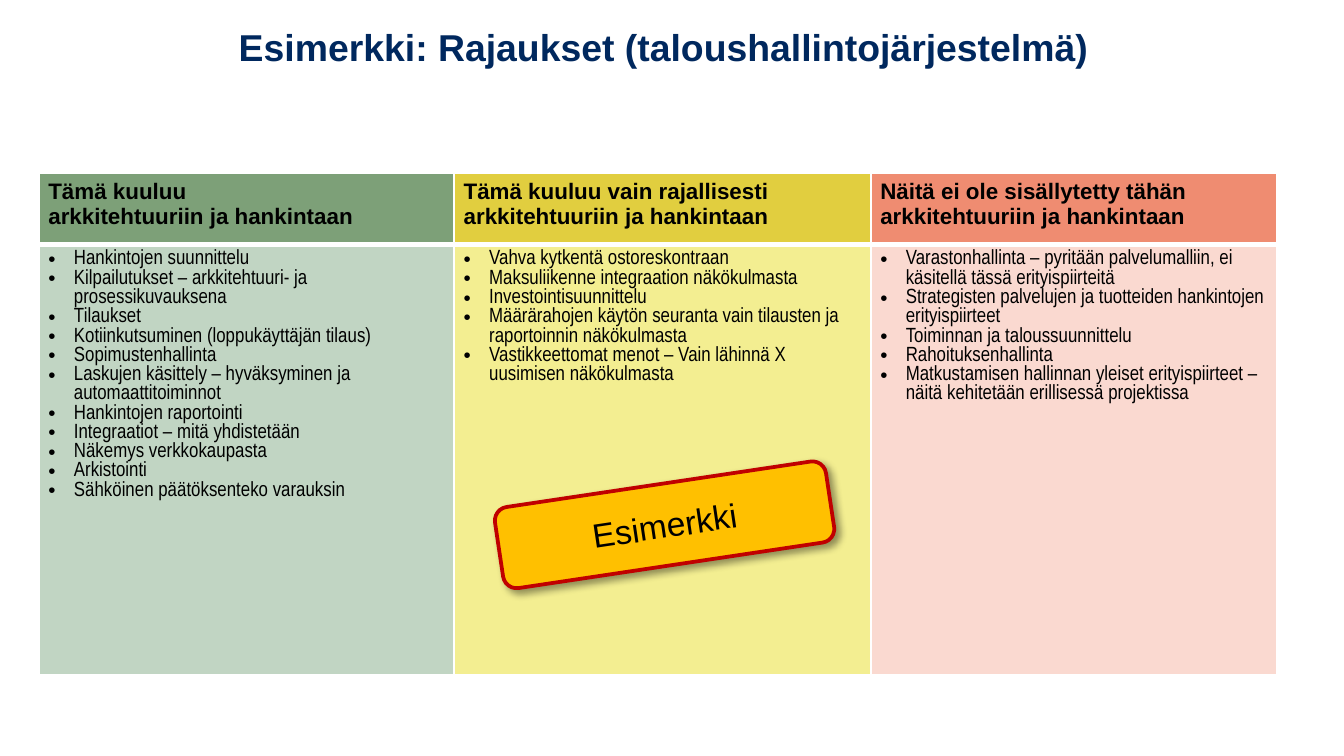
from lxml import etree
from pptx import Presentation
from pptx.dml.color import RGBColor
from pptx.enum.shapes import MSO_SHAPE
from pptx.enum.text import MSO_ANCHOR, PP_ALIGN
from pptx.oxml import parse_xml
from pptx.oxml.ns import nsdecls, qn
from pptx.util import Inches, Pt

THEME = {
    "font": "Arial", "narrow": "Arial Narrow",
    "title": "00285E", "text": "000000", "border": "FFFFFF",
    "stamp_fill": "FFC000", "stamp_line": "C00000",
    "title_size": 20, "header_size": 12, "body_size": 11, "stamp_size": 18,
}

TITLE = "Esimerkki: Rajaukset (taloushallintojärjestelmä)"
STAMP = "Esimerkki"
COLUMNS = [
    {
        "width": 3.09, "header_fill": "7DA078", "body_fill": "C1D5C3",
        "header": ["Tämä kuuluu", "arkkitehtuuriin ja hankintaan"],
        "items": [
            "Hankintojen suunnittelu",
            "Kilpailutukset – arkkitehtuuri- ja prosessikuvauksena",
            "Tilaukset",
            "Kotiinkutsuminen (loppukäyttäjän tilaus)",
            "Sopimustenhallinta",
            "Laskujen käsittely – hyväksyminen ja automaattitoiminnot",
            "Hankintojen raportointi",
            "Integraatiot – mitä yhdistetään",
            "Näkemys verkkokaupasta",
            "Arkistointi",
            "Sähköinen päätöksenteko varauksin",
        ],
    },
    {
        "width": 3.1, "header_fill": "E1CE3F", "body_fill": "F3EE91",
        "header": ["Tämä kuuluu vain rajallisesti", "arkkitehtuuriin ja hankintaan"],
        "items": [
            "Vahva kytkentä ostoreskontraan",
            "Maksuliikenne integraation näkökulmasta",
            "Investointisuunnittelu",
            "Määrärahojen käytön seuranta vain tilausten ja raportoinnin näkökulmasta",
            "Vastikkeettomat menot – Vain lähinnä X uusimisen näkökulmasta",
        ],
    },
    {
        "width": 3.02, "header_fill": "EF8C71", "body_fill": "FAD9D0",
        "header": ["Näitä ei ole sisällytetty tähän", "arkkitehtuuriin ja hankintaan"],
        "items": [
            "Varastonhallinta – pyritään palvelumalliin, ei käsitellä tässä erityispiirteitä",
            "Strategisten palvelujen ja tuotteiden hankintojen erityispiirteet",
            "Toiminnan ja taloussuunnittelu",
            "Rahoituksenhallinta",
            "Matkustamisen hallinnan yleiset erityispiirteet – näitä kehitetään "
            "erillisessä projektissa",
        ],
    },
]
ROW_HEIGHTS = [0.53, 3.2]


def color(name):
    return RGBColor.from_string(THEME.get(name, name))


def write(frame, lines, size, font="font", ink="text", bold=False, align=PP_ALIGN.LEFT):
    frame.word_wrap = True
    for index, line in enumerate(lines):
        paragraph = frame.paragraphs[0] if index == 0 else frame.add_paragraph()
        paragraph.text = line
        paragraph.alignment = align
        paragraph.font.name = THEME[font]
        paragraph.font.size = Pt(THEME[size])
        paragraph.font.bold = bold
        paragraph.font.color.rgb = color(ink)


def add_bullets(frame):
    for paragraph in frame.paragraphs:
        properties = paragraph._p.get_or_add_pPr()
        properties.set("marL", str(Inches(0.19)))
        properties.set("indent", str(-Inches(0.19)))
        bullet_font = parse_xml(f'<a:buFont {nsdecls("a")} typeface="Arial"/>')
        bullet = parse_xml(f'<a:buChar {nsdecls("a")} char="•"/>')
        # Bullet elements must come before the default run properties.
        for position, element in enumerate((bullet_font, bullet)):
            properties.insert(position, element)


def style_cell(cell, fill, thick_side):
    """Fill the cell and give it white borders, one of them thick."""
    cell.margin_left = cell.margin_right = Inches(0.07)
    cell.margin_top = cell.margin_bottom = Inches(0.04)
    cell.fill.solid()
    cell.fill.fore_color.rgb = color(fill)
    properties = cell._tc.get_or_add_tcPr()
    for position, side in enumerate(("lnL", "lnR", "lnT", "lnB")):
        width = Pt(3 if side == thick_side else 1)
        properties.insert(position, parse_xml(
            f'<a:{side} {nsdecls("a")} w="{width}"><a:solidFill>'
            f'<a:srgbClr val="{THEME["border"]}"/></a:solidFill></a:{side}>'))


def add_title(page):
    box = page.shapes.add_textbox(Inches(0.12), Inches(0.13), Inches(9.64), Inches(0.87))
    write(box.text_frame, [TITLE], "title_size", ink="title", bold=True,
          align=PP_ALIGN.CENTER)


def add_scope_table(page):
    total_width = sum(column["width"] for column in COLUMNS)
    table = page.shapes.add_table(
        len(ROW_HEIGHTS), len(COLUMNS), Inches(0.29), Inches(1.29),
        Inches(total_width), Inches(sum(ROW_HEIGHTS))).table
    for row, height in zip(table.rows, ROW_HEIGHTS):
        row.height = Inches(height)
    for index, column in enumerate(COLUMNS):
        table.columns[index].width = Inches(column["width"])
        header, body = table.cell(0, index), table.cell(1, index)
        style_cell(header, column["header_fill"], "lnB")
        write(header.text_frame, column["header"], "header_size", bold=True)
        style_cell(body, column["body_fill"], "lnT")
        write(body.text_frame, column["items"], "body_size", font="narrow")
        add_bullets(body.text_frame)


def add_stamp(page):
    stamp = page.shapes.add_shape(MSO_SHAPE.ROUNDED_RECTANGLE, Inches(3.7), Inches(3.6),
                                  Inches(2.49), Inches(0.61))
    stamp.rotation = 351.5
    stamp.fill.solid()
    stamp.fill.fore_color.rgb = color("stamp_fill")
    stamp.line.color.rgb = color("stamp_line")
    stamp.line.width = Pt(2)
    stamp.shadow.inherit = False
    effects = stamp._element.spPr.find(qn("a:effectLst"))
    shadow = etree.SubElement(effects, qn("a:outerShdw"), blurRad=str(Pt(4)),
                              dist=str(Pt(3)), dir=str(45 * 60000), algn="tl",
                              rotWithShape="0")
    shade = etree.SubElement(shadow, qn("a:srgbClr"), val="000000")
    etree.SubElement(shade, qn("a:alpha"), val="40000")
    stamp.text_frame.vertical_anchor = MSO_ANCHOR.MIDDLE
    write(stamp.text_frame, [STAMP], "stamp_size", align=PP_ALIGN.CENTER)


def main():
    deck = Presentation()
    deck.slide_width = Inches(10)
    deck.slide_height = deck.slide_width * 9 // 16
    page = deck.slides.add_slide(deck.slide_layouts[6])
    add_title(page)
    add_scope_table(page)
    add_stamp(page)
    deck.save("out.pptx")


if __name__ == "__main__":
    main()
